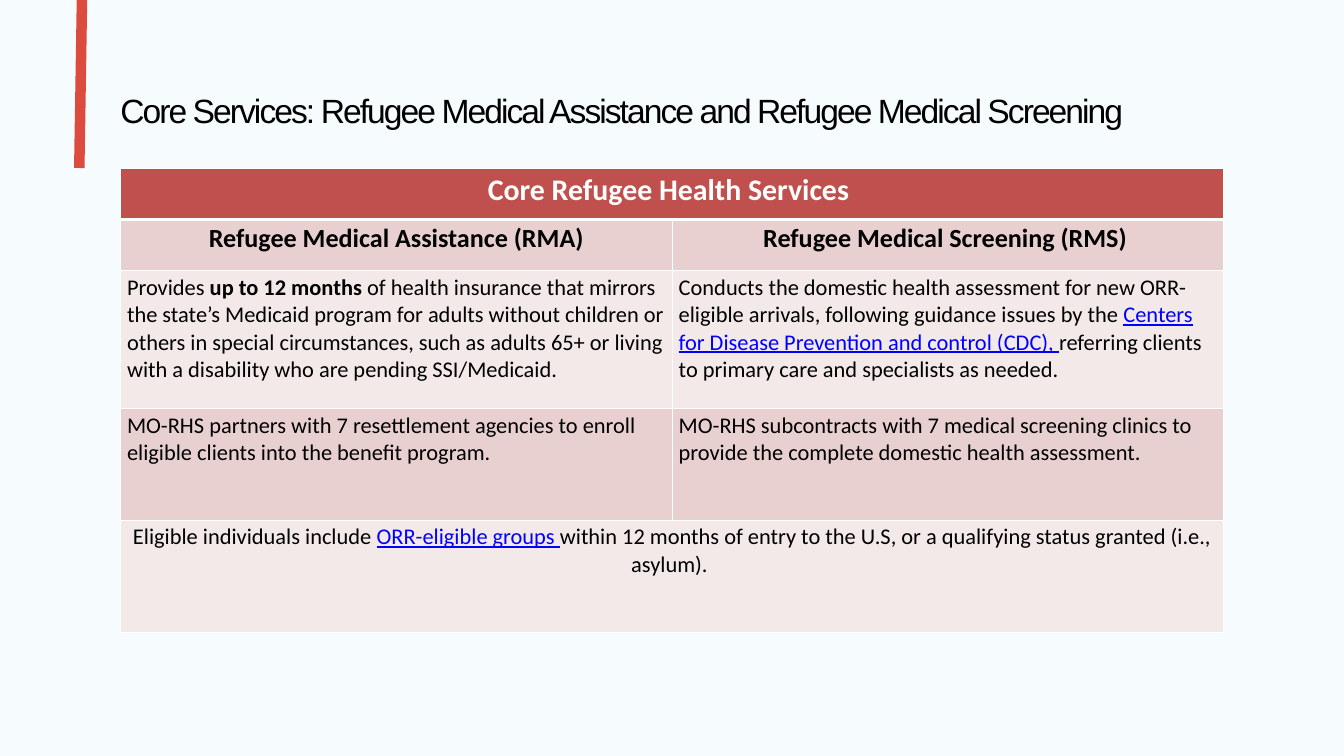
from dataclasses import dataclass

from lxml.etree import SubElement
from pptx import Presentation
from pptx.dml.color import RGBColor
from pptx.enum.text import MSO_ANCHOR, MSO_AUTO_SIZE, PP_ALIGN
from pptx.oxml.ns import qn
from pptx.util import Inches, Pt

BACKGROUND = RGBColor(0xF6, 0xFB, 0xFE)
ACCENT = RGBColor(0xDB, 0x4C, 0x3F)
HEADER = RGBColor(0xC0, 0x50, 0x4D)
BAND_DARK = RGBColor(0xE8, 0xD0, 0xD0)
BAND_LIGHT = RGBColor(0xF4, 0xE9, 0xE9)
WHITE = RGBColor(0xFF, 0xFF, 0xFF)
BLACK = RGBColor(0x00, 0x00, 0x00)
LINK = RGBColor(0x00, 0x00, 0xFF)

LEFT, WIDTH = 1.79, 16.42


@dataclass
class Piece:
    text: str
    bold: bool = False
    link: bool = False


@dataclass
class ServiceRow:
    height: float
    fill: RGBColor
    cells: list[list[Piece]]  # a single entry spans the whole row
    size: int = 24
    color: RGBColor = BLACK
    centered: bool = False


ROWS = [
    ServiceRow(0.76, HEADER, [[Piece("Core Refugee Health Services ", bold=True)]],
               size=32, color=WHITE, centered=True),
    ServiceRow(0.76, BAND_DARK, [
        [Piece("Refugee Medical Assistance (RMA)", bold=True)],
        [Piece("Refugee Medical Screening (RMS) ", bold=True)],
    ], size=28, centered=True),
    ServiceRow(2.05, BAND_LIGHT, [
        [Piece("Provides "),
         Piece("up to 12 months ", bold=True),
         Piece("of health insurance that mirrors the state’s Medicaid program for adults "
               "without children or others in special circumstances, such as adults 65+ or "
               "living with a disability who are pending SSI/Medicaid.")],
        [Piece("Conducts the domestic health assessment for new ORR-eligible arrivals, "
               "following guidance issues by the "),
         Piece("Centers for Disease Prevention and control (CDC), ", link=True),
         Piece("referring clients to primary care and specialists as needed.")],
    ]),
    ServiceRow(1.66, BAND_DARK, [
        [Piece("MO-RHS partners with 7 resettlement agencies to enroll eligible clients "
               "into the benefit program.")],
        [Piece("MO-RHS subcontracts with 7 medical screening clinics to provide the "
               "complete domestic health assessment.")],
    ]),
    ServiceRow(1.67, BAND_LIGHT, [
        [Piece("Eligible individuals include "),
         Piece("ORR-eligible groups ", link=True),
         Piece("within 12 months of entry to the U.S, or a qualifying status granted "
               "(i.e., asylum). ")],
    ], centered=True),
]


def add_span(para, text: str, *, font: str = "Calibri", size: int, color: RGBColor,
             bold: bool = False, underline: bool = False):
    span = para.add_run()
    span.text = text
    span.font.name = font
    span.font.size = Pt(size)
    span.font.color.rgb = color
    span.font.bold = bold
    span.font.underline = underline
    return span


def add_title(page, text: str) -> None:
    box = page.shapes.title
    box.left, box.top = Inches(LEFT), Inches(0.84)
    box.width, box.height = Inches(WIDTH), Inches(0.95)
    frame = box.text_frame
    frame.margin_left = frame.margin_top = frame.margin_right = frame.margin_bottom = 0
    frame.word_wrap = True
    frame.auto_size = MSO_AUTO_SIZE.NONE
    frame.vertical_anchor = MSO_ANCHOR.TOP
    para = frame.paragraphs[0]
    para.alignment = PP_ALIGN.LEFT
    para.line_spacing = Pt(79.4)
    span = add_span(para, text, font="Arial", size=36, color=BLACK)
    span.font._element.set("spc", "-210")


def add_accent_line(page) -> None:
    line = page.shapes.add_connector(1, Inches(1.18), Inches(2.5), Inches(1.22), Inches(0))
    line.line.color.rgb = ACCENT
    line.line.width = Pt(11.25)
    SubElement(line._element.spPr, qn("a:effectLst"))


def set_borders(cell, *, top: float = 1, bottom: float = 1) -> None:
    """Draw white borders; call before filling, as the schema puts lines first."""
    properties = cell._tc.get_or_add_tcPr()
    for side, points in (("L", 1), ("R", 1), ("T", top), ("B", bottom)):
        border = SubElement(properties, qn(f"a:ln{side}"), w=str(Pt(points)))
        fill = SubElement(border, qn("a:solidFill"))
        SubElement(fill, qn("a:srgbClr"), val=str(WHITE))


def add_services_table(page, rows: list[ServiceRow]) -> None:
    height = sum(row.height for row in rows)
    table = page.shapes.add_table(len(rows), 2, Inches(LEFT), Inches(2.51),
                                  Inches(WIDTH), Inches(height)).table
    for index, row in enumerate(rows):
        table.rows[index].height = Inches(row.height)
        for column in range(2):
            cell = table.cell(index, column)
            set_borders(cell, top=3 if index == 1 else 1, bottom=3 if index == 0 else 1)
            cell.fill.solid()
            cell.fill.fore_color.rgb = row.fill
        if len(row.cells) == 1:
            table.cell(index, 0).merge(table.cell(index, 1))
        for column, pieces in enumerate(row.cells):
            para = table.cell(index, column).text_frame.paragraphs[0]
            para.alignment = PP_ALIGN.CENTER if row.centered else PP_ALIGN.LEFT
            for piece in pieces:
                add_span(para, piece.text, size=row.size, bold=piece.bold,
                         color=LINK if piece.link else row.color, underline=piece.link)


def main() -> None:
    deck = Presentation()
    deck.slide_width, deck.slide_height = Inches(20), Inches(11.25)
    page = deck.slides.add_slide(deck.slide_layouts.get_by_name("Title Only"))
    page.background.fill.solid()
    page.background.fill.fore_color.rgb = BACKGROUND
    add_accent_line(page)
    add_title(page, "Core Services: Refugee Medical Assistance and Refugee Medical Screening")
    add_services_table(page, ROWS)
    deck.save("out.pptx")


if __name__ == "__main__":
    main()
